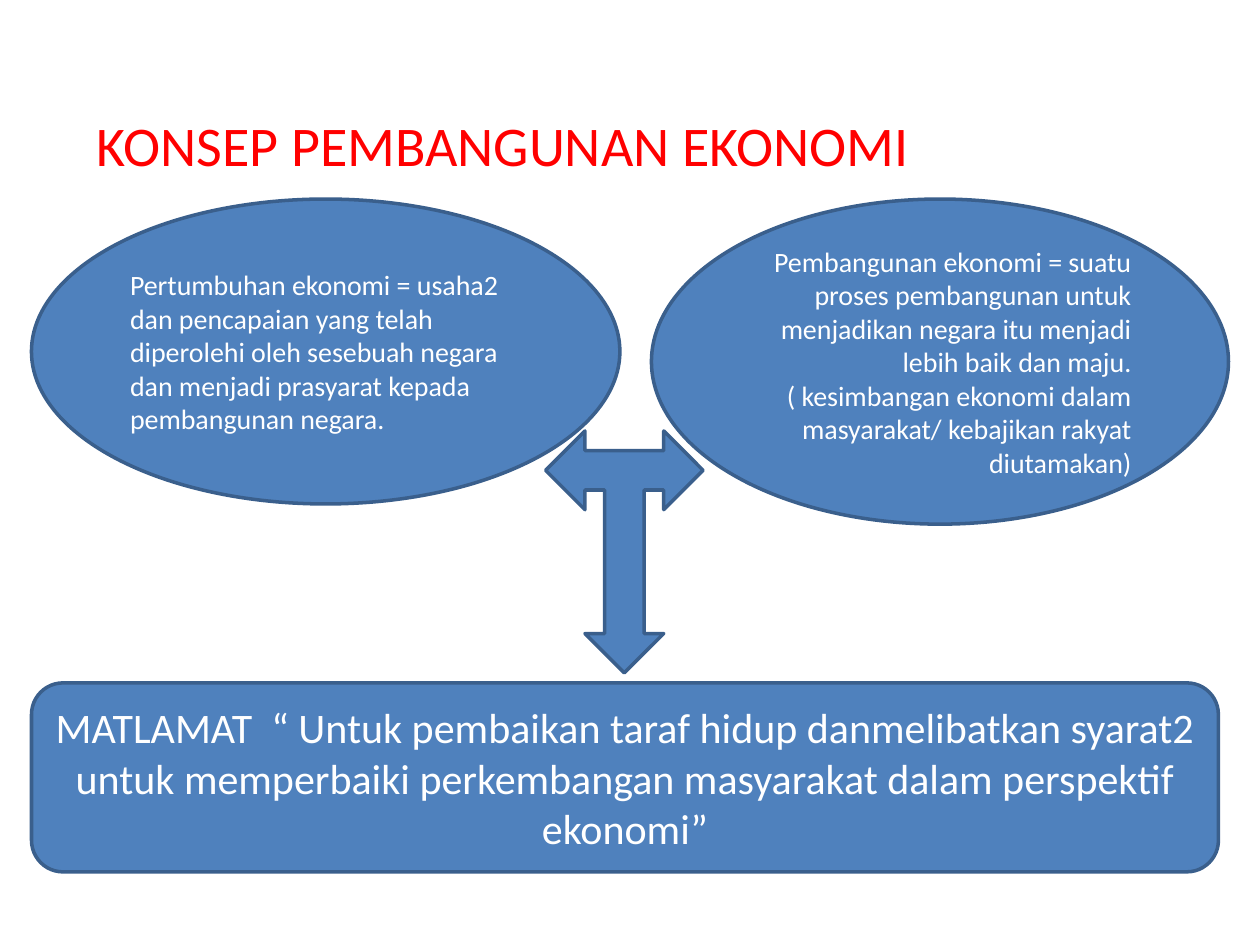
from dataclasses import dataclass

import pptx
import pptx.dml.color
import pptx.enum.shapes
import pptx.enum.text
import pptx.util

Inches = pptx.util.Inches
Pt = pptx.util.Pt
ShapeType = pptx.enum.shapes.MSO_SHAPE
Align = pptx.enum.text.PP_ALIGN

FONT = "Calibri"
COLORS = {"title": "FF0000", "fill": "4F81BD", "line": "3A5F8C", "text": "FFFFFF"}


@dataclass
class Block:
    kind: ShapeType
    left: float
    top: float
    width: float
    height: float
    paragraphs: tuple[str, ...] = ()
    size: int = 16
    align: Align = Align.LEFT
    rotation: int = 0


BLOCKS = [
    Block(ShapeType.OVAL, 0.25, 1.58, 4.67, 2.42, (
        "Pertumbuhan ekonomi = usaha2 dan pencapaian yang telah diperolehi oleh "
        "sesebuah negara dan menjadi prasyarat kepada pembangunan negara.",
    )),
    Block(ShapeType.OVAL, 5.17, 1.58, 4.58, 2.58, (
        "Pembangunan ekonomi = suatu proses pembangunan untuk menjadikan negara "
        "itu menjadi lebih baik dan maju.",
        "( kesimbangan ekonomi dalam masyarakat/ kebajikan rakyat diutamakan)",
    ), align=Align.RIGHT),
    Block(ShapeType.ROUNDED_RECTANGLE, 0.25, 5.42, 9.42, 1.5, (
        "MATLAMAT  “ Untuk pembaikan taraf hidup danmelibatkan syarat2 untuk "
        "memperbaiki perkembangan masyarakat dalam perspektif ekonomi”",
    ), size=24, align=Align.CENTER),
    Block(ShapeType.LEFT_RIGHT_UP_ARROW, 4.33, 3.42, 1.25, 1.92, rotation=180),
]


def color(name: str) -> pptx.dml.color.RGBColor:
    return pptx.dml.color.RGBColor.from_string(COLORS[name])


def write_paragraphs(
    text_frame, texts: tuple[str, ...], size: int, color_name: str, align: Align
) -> None:
    text_frame.word_wrap = True
    for index, text in enumerate(texts):
        paragraph = text_frame.add_paragraph() if index else text_frame.paragraphs[0]
        paragraph.text = text
        paragraph.alignment = align
        paragraph.font.name = FONT
        paragraph.font.size = Pt(size)
        paragraph.font.color.rgb = color(color_name)


def add_title(slide) -> None:
    title = slide.shapes.add_textbox(Inches(0.67), Inches(0.83), Inches(8.42), Inches(0.64))
    write_paragraphs(
        title.text_frame, ("KONSEP PEMBANGUNAN EKONOMI",), 32, "title", Align.LEFT
    )
    title.text_frame.auto_size = pptx.enum.text.MSO_AUTO_SIZE.SHAPE_TO_FIT_TEXT


def add_block(slide, block: Block) -> None:
    shape = slide.shapes.add_shape(
        block.kind,
        Inches(block.left), Inches(block.top), Inches(block.width), Inches(block.height),
    )
    shape.rotation = block.rotation
    shape.shadow.inherit = False
    shape.fill.solid()
    shape.fill.fore_color.rgb = color("fill")
    shape.line.color.rgb = color("line")
    shape.line.width = Pt(2)
    shape.text_frame.vertical_anchor = pptx.enum.text.MSO_ANCHOR.MIDDLE
    write_paragraphs(shape.text_frame, block.paragraphs, block.size, "text", block.align)


def main() -> None:
    presentation = pptx.Presentation()
    presentation.slide_width = Inches(10)
    presentation.slide_height = Inches(7.5)
    slide = presentation.slides.add_slide(presentation.slide_layouts[6])
    add_title(slide)
    for block in BLOCKS:
        add_block(slide, block)
    presentation.save("out.pptx")


if __name__ == "__main__":
    main()
